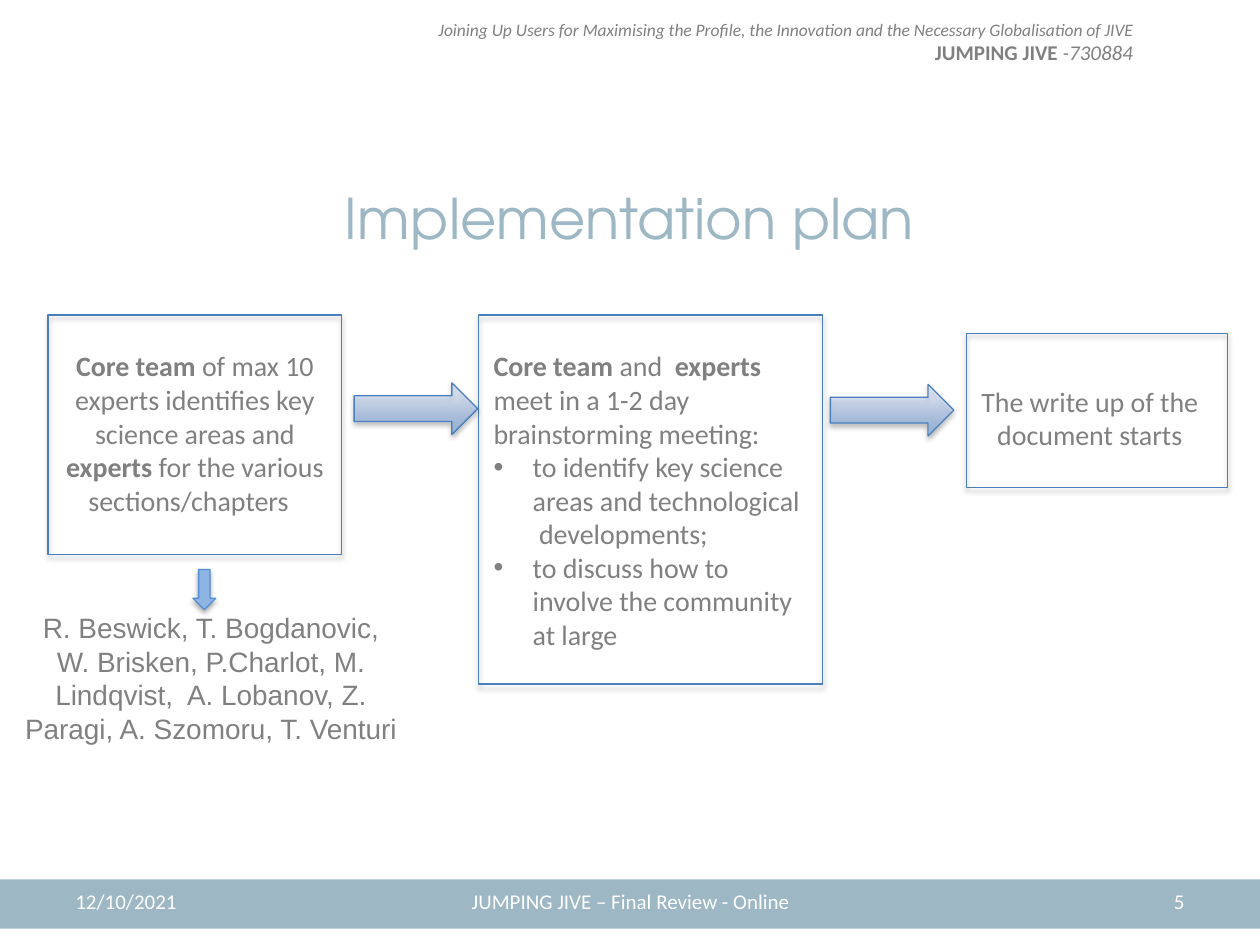
from lxml import etree
from pptx import Presentation
from pptx.dml.color import RGBColor as RGB
from pptx.enum.shapes import MSO_SHAPE as SHAPE
from pptx.enum.text import MSO_ANCHOR as ANCHOR, PP_ALIGN as ALIGN
from pptx.oxml.ns import qn
from pptx.util import Cm, Pt

COLORS = {
    "band": "9DB7C4", "text": "808080", "white": "FFFFFF", "line": "4B7EBC",
    "arrow": "95B3D7", "arrow_end": "A4C4FF",
    "down": "8EB4E3", "down_line": "558ED5", "shadow": "000000",
}
BOLD, ITALIC = {"bold": True}, {"italic": True}


def color(name):
    return RGB.from_string(COLORS[name])


class SlideBuilder:
    def __init__(self, slide, font="Calibri", size=16):
        self.slide, self.font, self.size = slide, font, size

    def format_text(self, r, **values):
        style = {"name": self.font, "size": self.size, "color": "text"} | values
        r.font.color.rgb = color(style.pop("color"))
        style["size"] = Pt(style["size"])
        for name, value in style.items():
            setattr(r.font, name, value)

    def title(self, text, box):
        s = self.slide.shapes.title
        s.left, s.top, s.width, s.height = map(Cm, box)
        s.text_frame.vertical_anchor = ANCHOR.MIDDLE
        p = s.text_frame.paragraphs[0]
        p.alignment = ALIGN.CENTER
        r = p.add_run()
        r.text = text
        self.format_text(r, name="TeX Gyre Adventor", size=32, color="band")

    def text(self, paragraphs, box, align=ALIGN.LEFT, anchor=ANCHOR.TOP,
             bullets_from=None, **values):
        """Each paragraph is a list of (text, format values) runs."""
        tf = self.slide.shapes.add_textbox(*map(Cm, box)).text_frame
        tf.word_wrap, tf.vertical_anchor = True, anchor
        for i, runs in enumerate(paragraphs):
            p = tf.add_paragraph() if i else tf.paragraphs[0]
            p.alignment = align
            if bullets_from is not None and i >= bullets_from:
                self.bullet(p)
            for text, extra in runs:
                r = p.add_run()
                r.text = text
                self.format_text(r, **values | extra)

    def bullet(self, p):
        pPr = p._p.get_or_add_pPr()
        pPr.set("marL", str(Cm(0.79)))
        pPr.set("indent", str(-Cm(0.79)))
        etree.SubElement(pPr, qn("a:buFont")).set("typeface", "Arial")
        etree.SubElement(pPr, qn("a:buChar")).set("char", "•")

    def shape(self, kind, box, fill=None, line=None):
        s = self.slide.shapes.add_shape(kind, *map(Cm, box))
        s.shadow.inherit = False
        if fill:
            s.fill.solid()
            s.fill.fore_color.rgb = color(fill)
        else:
            s.fill.background()
        if line:
            s.line.color.rgb = color(line)
            s.line.width = Pt(0.75)
            self.drop_shadow(s)
        else:
            s.line.fill.background()
        return s

    def drop_shadow(self, s):
        effects = s._element.spPr.find(qn("a:effectLst"))
        shadow = etree.SubElement(
            effects, qn("a:outerShdw"), blurRad=str(Pt(3.1)),
            dist=str(Pt(1.8)), dir="5400000", rotWithShape="0")
        rgb = etree.SubElement(shadow, qn("a:srgbClr"), val=COLORS["shadow"])
        etree.SubElement(rgb, qn("a:alpha"), val="35000")

    def gradient_arrow(self, box):
        s = self.shape(SHAPE.RIGHT_ARROW, box, line="line")
        s.fill.gradient()
        s.fill.gradient_angle = 90
        for stop, name in zip(s.fill.gradient_stops, ("arrow", "arrow_end")):
            stop.color.rgb = color(name)
        last = list(s._element.spPr.iter(qn("a:gs")))[-1]
        etree.SubElement(last[0], qn("a:alpha"), val="6000")


def main():
    prs = Presentation()
    prs.slide_width, prs.slide_height = Cm(25.4), Cm(19.05)
    b = SlideBuilder(prs.slides.add_slide(prs.slide_layouts[5]))

    # Header and title
    b.text([
        [("Joining Up Users for Maximising the Profile, the Innovation and "
          "the Necessary Globalisation of JIVE", ITALIC | {"size": 10})],
        [("JUMPING JIVE ", BOLD), ("-730884", ITALIC)],
    ], (8.15, 0.25, 14.94, 1.19), ALIGN.RIGHT, size=12)
    b.title("Implementation plan", (1.9, 2.34, 21.59, 4.09))

    # Footer band with date, event and slide number
    b.shape(SHAPE.RECTANGLE, (0, 17.73, 25.4, 0.99), fill="band")
    for text, left, width, align in (
        ("12/10/2021", 1.27, 5.92, ALIGN.LEFT),
        ("JUMPING JIVE – Final Review - Online", 8.69, 8.05, ALIGN.CENTER),
        ("5", 18.21, 5.92, ALIGN.RIGHT),
    ):
        b.text([[(text, {})]], (left, 17.65, width, 1.02), align,
               ANCHOR.MIDDLE, size=12, color="white")

    # Step frames and arrows
    for box in ((0.97, 6.35, 5.92, 4.83), (9.65, 6.35, 6.93, 7.44),
                (19.48, 6.73, 5.26, 3.1)):
        b.shape(SHAPE.RECTANGLE, box, line="line")
    for left, top in ((7.14, 7.72), (16.74, 7.75)):
        b.gradient_arrow((left, top, 2.49, 1.04))
    b.shape(SHAPE.DOWN_ARROW, (3.89, 11.48, 0.46, 0.81), "down", "down_line")

    # Step texts
    b.text([[
        ("Core team ", BOLD),
        ("of max 10 experts identifies key science areas and ", {}),
        ("experts ", BOLD), ("for the various sections/chapters  ", {}),
    ]], (0.97, 6.91, 5.92, 3.68), ALIGN.CENTER)
    b.text([
        [("Core team ", BOLD), ("and  ", {}), ("experts ", BOLD),
         (" meet in a 1-2 day brainstorming meeting:", {})],
        [("to identify key science areas and technological  developments;", {})],
        [("to discuss how to involve the community at large", {})],
    ], (9.7, 6.91, 6.76, 6.4), bullets_from=1)
    b.text([[("The write up of the document starts", {})]],
           (19.15, 7.62, 5.64, 1.63), ALIGN.CENTER)

    # Core team members
    b.text([[("R. Beswick, T. Bogdanovic, W. Brisken, P.Charlot, M. Lindqvist,  "
              "A. Lobanov, Z. Paragi, A. Szomoru, T. Venturi", {})]],
           (0.23, 12.19, 8.05, 3), ALIGN.CENTER, name="Arial")

    prs.save("out.pptx")


if __name__ == "__main__":
    main()
